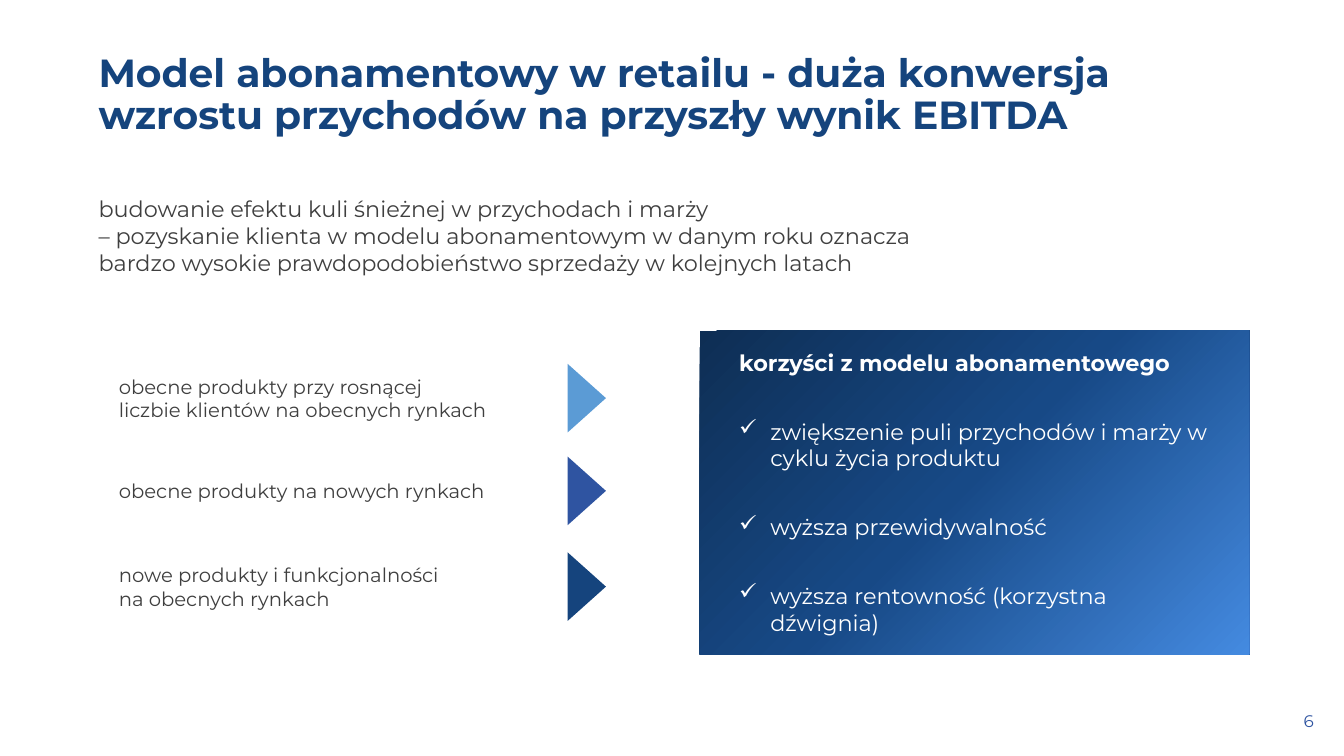
from dataclasses import dataclass

from lxml.etree import SubElement
from pptx import Presentation
from pptx.dml.color import RGBColor
from pptx.enum.shapes import MSO_SHAPE
from pptx.enum.text import MSO_ANCHOR, PP_ALIGN
from pptx.oxml.ns import qn
from pptx.util import Inches, Pt

FONT = "Montserrat"
COLORS = {
    "navy": "15447D",
    "blue": "2F54A1",
    "sky": "5B9BD5",
    "grey": "3F3F3F",
    "white": "FFFFFF",
}
PANEL_GRADIENT = [(0, "0E2E54"), (48, "174986"), (100, "448AE0")]


@dataclass
class GrowthSource:
    lines: list[str]
    top: float
    color: str


GROWTH_SOURCES = [
    GrowthSource(["obecne produkty przy rosnącej",
                  "liczbie klientów na obecnych rynkach"], 3.61, "sky"),
    GrowthSource(["obecne produkty na nowych rynkach"], 4.53, "blue"),
    GrowthSource(["nowe produkty i funkcjonalności",
                  "na obecnych rynkach"], 5.48, "navy"),
]
BENEFITS_HEADING = "korzyści z modelu abonamentowego"
BENEFITS = [
    "zwiększenie puli przychodów i marży w cyklu życia produktu",
    "wyższa przewidywalność",
    "wyższa rentowność (korzystna dźwignia)",
]


def add_span(para, text: str, size: float, color: str, bold: bool = False) -> None:
    span = para.add_run()
    span.text = text
    span.font.name = FONT
    span.font.size = Pt(size)
    span.font.bold = bold
    span.font.color.rgb = RGBColor.from_string(COLORS[color])


def add_text(page, at: tuple, lines: list[str], size: float, color: str,
             bold: bool = False, anchor=MSO_ANCHOR.MIDDLE):
    """Add a text box with line breaks between lines; return its paragraph."""
    box = page.shapes.add_textbox(*map(Inches, at))
    frame = box.text_frame
    frame.word_wrap = True
    frame.vertical_anchor = anchor
    para = frame.paragraphs[0]
    for index, line in enumerate(lines):
        if index:
            para.add_line_break()
        add_span(para, line, size, color, bold)
    return para


def add_shape(page, kind, at: tuple):
    shape = page.shapes.add_shape(kind, *map(Inches, at))
    shape.shadow.inherit = False
    shape.line.fill.background()
    return shape


def set_check_bullet(para) -> None:
    properties = para._p.get_or_add_pPr()
    properties.set("marL", str(Inches(0.31)))
    properties.set("indent", str(Inches(-0.31)))
    bullet_color = SubElement(properties, qn("a:buClr"))
    SubElement(bullet_color, qn("a:srgbClr"), val=COLORS["white"])
    SubElement(properties, qn("a:buChar"), char="✓")


def fill_gradient(shape, stops: list[tuple[int, str]]) -> None:
    """Fill a shape from its top left to its bottom right corner."""
    shape.fill.gradient()
    shape.fill.gradient_angle = 315
    stop_list = shape._element.spPr.find(qn("a:gradFill")).find(qn("a:gsLst"))
    for old_stop in list(stop_list):
        stop_list.remove(old_stop)
    for percent, color in stops:
        stop = SubElement(stop_list, qn("a:gs"), pos=str(percent * 1000))
        SubElement(stop, qn("a:srgbClr"), val=color)


def add_growth_source(page, source: GrowthSource) -> None:
    add_text(page, (1.08, source.top, 4.56, 0.68), source.lines, 14, "grey")
    arrow = add_shape(page, MSO_SHAPE.ISOSCELES_TRIANGLE,
                      (5.48, source.top + 0.15, 0.68, 0.38))
    arrow.rotation = 90
    arrow.fill.solid()
    arrow.fill.fore_color.rgb = RGBColor.from_string(COLORS[source.color])


def add_benefits_panel(page) -> None:
    panel = add_shape(page, MSO_SHAPE.RECTANGLE, (6.94, 3.28, 5.45, 3.21))
    fill_gradient(panel, PANEL_GRADIENT)
    frame = panel.text_frame
    frame.word_wrap = True
    frame.vertical_anchor = MSO_ANCHOR.MIDDLE
    frame.margin_left = frame.margin_right = Inches(0.39)
    heading = frame.paragraphs[0]
    heading.alignment = PP_ALIGN.LEFT
    heading.space_after = Pt(12)
    add_span(heading, BENEFITS_HEADING, 16, "white", bold=True)
    for benefit in BENEFITS:
        para = frame.add_paragraph()
        set_check_bullet(para)
        para.alignment = PP_ALIGN.LEFT
        para.space_before = Pt(18)
        para.space_after = Pt(12)
        add_span(para, benefit, 16, "white")


def main() -> None:
    deck = Presentation()
    deck.slide_width = Inches(13.33)
    deck.slide_height = Inches(7.5)
    page = deck.slides.add_slide(deck.slide_layouts[6])

    title = add_text(
        page, (0.88, 0.48, 11.53, 0.91),
        ["Model abonamentowy w retailu - duża konwersja "
         "wzrostu przychodów na przyszły wynik EBITDA"],
        28, "navy", bold=True, anchor=MSO_ANCHOR.TOP)
    title.line_spacing = 0.9
    add_text(
        page, (0.88, 1.83, 8.46, 1.02),
        ["budowanie efektu kuli śnieżnej w przychodach i marży",
         "– pozyskanie klienta w modelu abonamentowym w danym roku oznacza",
         "bardzo wysokie prawdopodobieństwo sprzedaży w kolejnych latach"],
        16, "grey")
    add_benefits_panel(page)
    for source in GROWTH_SOURCES:
        add_growth_source(page, source)
    page_number = add_text(page, (10.13, 6.95, 3, 0.4), ["6"], 12, "blue")
    page_number.alignment = PP_ALIGN.RIGHT

    deck.save("out.pptx")


if __name__ == "__main__":
    main()
